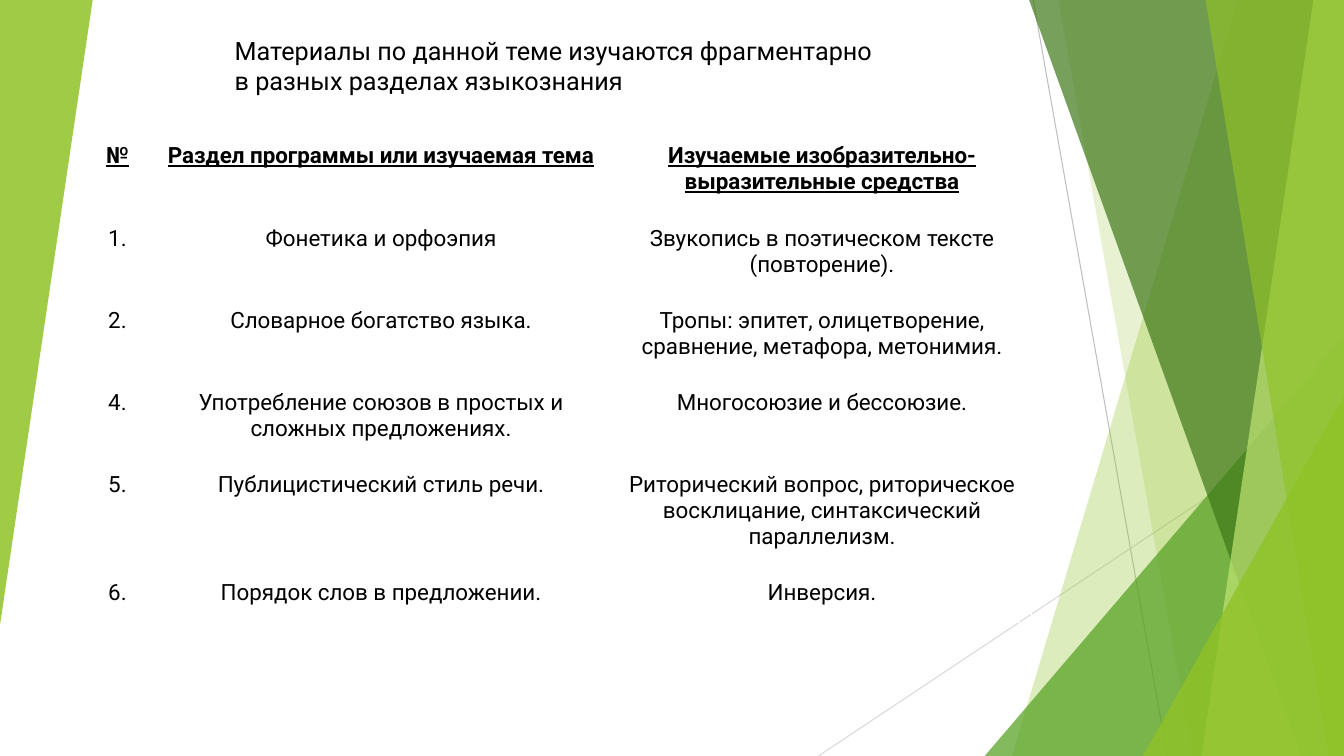
from lxml import etree
from pptx import Presentation
from pptx.dml import color
from pptx.enum import shapes, text
from pptx.oxml import ns
from pptx.util import Pt

WIDTH, HEIGHT = 960, 540
LIME = "90C226"
ROWS = [
    ("№", "Раздел программы или изучаемая тема",
     "Изучаемые изобразительно-выразительные средства"),
    ("1.", "Фонетика и орфоэпия", "Звукопись в поэтическом тексте (повторение)."),
    ("2.", "Словарное богатство языка.",
     "Тропы: эпитет, олицетворение, сравнение, метафора, метонимия."),
    ("4.", "Употребление союзов в простых и сложных предложениях.",
     "Многосоюзие и бессоюзие."),
    ("5.", "Публицистический стиль речи.",
     "Риторический вопрос, риторическое восклицание, синтаксический параллелизм."),
    ("6.", "Порядок слов в предложении.", "Инверсия."),
]


def paint(target, shade):
    target.rgb = color.RGBColor.from_string(shade)


def write(frame, *lines, size=16, shade="000000", bold=False, under=False,
          align=text.PP_ALIGN.LEFT):
    frame.word_wrap = True
    for i, line in enumerate(lines):
        para = frame.paragraphs[0] if i == 0 else frame.add_paragraph()
        para.alignment = align
        run = para.add_run()
        run.text = line
        font = run.font
        font.name, font.size = "Roboto", Pt(size)
        font.bold, font.underline = bold, under
        paint(font.color, shade)


def tint(shape, shade, alpha):
    shape.shadow.inherit = False
    shape.line.fill.background()
    shape.fill.solid()
    paint(shape.fill.fore_color, shade)
    node = shape.fill._xPr.find(".//" + ns.qn("a:srgbClr"))
    etree.SubElement(node, ns.qn("a:alpha"), val=str(alpha * 1000))


def band(slide, top, base, shade, alpha):
    pen = slide.shapes.build_freeform(Pt(top), 0)
    pen.add_line_segments([(Pt(WIDTH), 0), (Pt(WIDTH), Pt(HEIGHT)),
                           (Pt(base), Pt(HEIGHT))])
    tint(pen.convert_to_shape(), shade, alpha)


def wedge(slide, box, shade, alpha, turn=0):
    shape = slide.shapes.add_shape(shapes.MSO_SHAPE.ISOSCELES_TRIANGLE,
                                   *map(Pt, box))
    shape.adjustments[0] = 1
    shape.rotation = turn
    tint(shape, shade, alpha)


def rule(slide, ends, shade):
    line = slide.shapes.add_connector(shapes.MSO_CONNECTOR.STRAIGHT,
                                      *map(Pt, ends))
    line.line.width = Pt(0.75)
    paint(line.line.color, shade)
    etree.SubElement(line._element.spPr, ns.qn("a:effectLst"))


def decor(slide):
    rule(slide, (738, 0, 833.8, HEIGHT), "BFBFBF")
    rule(slide, (WIDTH, 290.2, 584.6, HEIGHT), "D9D9D9")
    band(slide, 884.2, 722.9, LIME, 30)
    band(slide, 756, 851.8, LIME, 20)
    wedge(slide, (703.4, 239.8, 256.6, 300.2), "54A021", 72)
    band(slide, 735.1, 929.5, "3F7819", 70)
    band(slide, 938.2, 858.2, "C0E474", 70)
    band(slide, 861.1, 949, LIME, 65)
    wedge(slide, (816.5, 283, 143.5, 257), LIME, 80)
    wedge(slide, (0, 0, 66.2, 446.4), LIME, 85, turn=180)


def grid(slide, left, top, widths, heights):
    frame = slide.shapes.add_table(len(ROWS), len(widths), Pt(left), Pt(top),
                                   Pt(sum(widths)), Pt(sum(heights)))
    table = frame.table
    table.first_row = table.horz_banding = False
    for col, width in zip(table.columns, widths):
        col.width = Pt(width)
    for r, (row, height) in enumerate(zip(ROWS, heights)):
        table.rows[r].height = Pt(height)
        for c, words in enumerate(row):
            cell = table.cell(r, c)
            cell.fill.background()
            cell.margin_left = cell.margin_right = Pt(1.4)
            cell.margin_top = cell.margin_bottom = Pt(1.4)
            write(cell.text_frame, words, bold=r == 0, under=r == 0,
                  align=text.PP_ALIGN.CENTER)


def title(slide):
    box = slide.shapes.add_textbox(Pt(160.6), Pt(21.6), Pt(491.8), Pt(51))
    write(box.text_frame, "Материалы по данной теме изучаются фрагментарно",
          "в разных разделах языкознания", size=18)
    box.text_frame.auto_size = text.MSO_AUTO_SIZE.SHAPE_TO_FIT_TEXT


def main():
    deck = Presentation()
    deck.slide_width, deck.slide_height = Pt(WIDTH), Pt(HEIGHT)
    slide = deck.slides.add_slide(deck.slide_layouts[6])
    decor(slide)
    grid(slide, 61.2, 100.8, (45.4, 331.2, 298.8),
         (59.3, 58.6, 58.6, 58.6, 77.1, 32))
    title(slide)
    deck.save("out.pptx")


if __name__ == "__main__":
    main()
